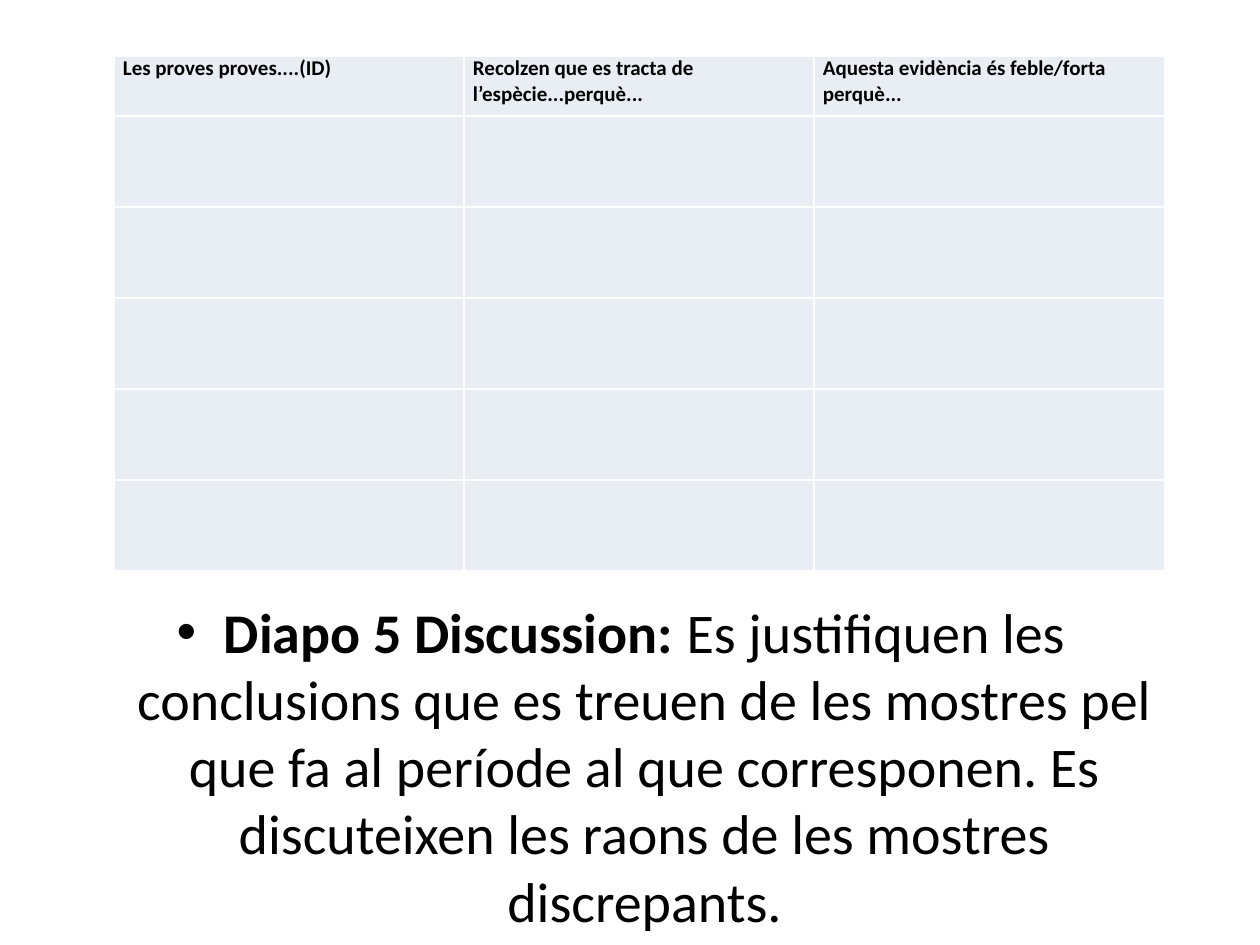
from dataclasses import dataclass

from lxml.etree import SubElement
from pptx import Presentation
from pptx.dml.color import RGBColor
from pptx.enum.text import MSO_ANCHOR, MSO_AUTO_SIZE, PP_ALIGN
from pptx.oxml.ns import qn
from pptx.slide import Slide
from pptx.table import _Cell
from pptx.text.text import _Paragraph
from pptx.util import Emu, Pt

EMU_PER_PX = 914400 // 126


@dataclass(frozen=True)
class Theme:
    font: str = "Calibri"
    ink: str = "000000"
    cell_fill: str = "E9EDF4"
    border: str = "FFFFFF"
    border_width: int = Pt(1)
    header_size: int = 12
    body_size: int = 32


@dataclass(frozen=True)
class Box:
    left: int
    top: int
    width: int
    height: int

    def emu(self) -> tuple[Emu, ...]:
        return tuple(px(side) for side in (self.left, self.top, self.width, self.height))


THEME = Theme()
HEADERS = (
    "Les proves proves....(ID)",
    "Recolzen que es tracta de l’espècie...perquè...",
    "Aquesta evidència és feble/forta perquè...",
)
COLUMN_WIDTHS = (350, 350, 351)
ROW_HEIGHTS = (60,) + (91,) * 5
TABLE_BOX = Box(114, 56, sum(COLUMN_WIDTHS), sum(ROW_HEIGHTS))
DISCUSSION_BOX = Box(54, 591, 1134, 193)
CELL_INSET = 9


def px(length: int) -> Emu:
    return Emu(length * EMU_PER_PX)


def add_text(para: _Paragraph, text: str, *, size: int, bold: bool = False) -> None:
    span = para.add_run()
    span.text = text
    span.font.name = THEME.font
    span.font.size = Pt(size)
    span.font.bold = bold
    span.font.color.rgb = RGBColor.from_string(THEME.ink)


def format_cell(cell: _Cell) -> None:
    properties = cell._tc.get_or_add_tcPr()
    for side in ("lnL", "lnR", "lnT", "lnB"):
        line = SubElement(properties, qn(f"a:{side}"), w=str(THEME.border_width))
        fill = SubElement(line, qn("a:solidFill"))
        SubElement(fill, qn("a:srgbClr"), val=THEME.border)
    cell.fill.solid()
    cell.fill.fore_color.rgb = RGBColor.from_string(THEME.cell_fill)
    cell.margin_left = cell.margin_right = px(CELL_INSET)
    cell.margin_top = cell.margin_bottom = 0


def add_evidence_table(page: Slide) -> None:
    frame = page.shapes.add_table(len(ROW_HEIGHTS), len(COLUMN_WIDTHS), *TABLE_BOX.emu())
    table = frame.table
    table.first_row = table.horz_banding = False
    for column, width in zip(table.columns, COLUMN_WIDTHS):
        column.width = px(width)
    for row, height in zip(table.rows, ROW_HEIGHTS):
        row.height = px(height)
    for cell in table.iter_cells():
        format_cell(cell)
    for cell, header in zip(table.rows[0].cells, HEADERS):
        add_text(cell.text_frame.paragraphs[0], header, size=THEME.header_size, bold=True)


def fill_discussion(page: Slide) -> None:
    """The body placeholder brings its bullet, hanging indent and spacing."""
    body = page.placeholders[1]
    body.left, body.top, body.width, body.height = DISCUSSION_BOX.emu()
    frame = body.text_frame
    frame.word_wrap = True
    frame.auto_size = MSO_AUTO_SIZE.NONE
    frame.vertical_anchor = MSO_ANCHOR.TOP
    para = frame.paragraphs[0]
    para.alignment = PP_ALIGN.CENTER
    add_text(para, "Diapo 5 Discussion:", size=THEME.body_size, bold=True)
    add_text(
        para,
        " Es justifiquen les conclusions que es treuen de les mostres pel que fa al "
        "període al que corresponen. Es discuteixen les raons de les mostres discrepants.",
        size=THEME.body_size,
    )


def main() -> None:
    deck = Presentation()
    deck.slide_width, deck.slide_height = px(1260), px(945)
    page = deck.slides.add_slide(deck.slide_layouts.get_by_name("Title and Content"))
    title = page.shapes.title.element
    title.getparent().remove(title)
    fill_discussion(page)
    add_evidence_table(page)
    deck.save("out.pptx")


if __name__ == "__main__":
    main()
